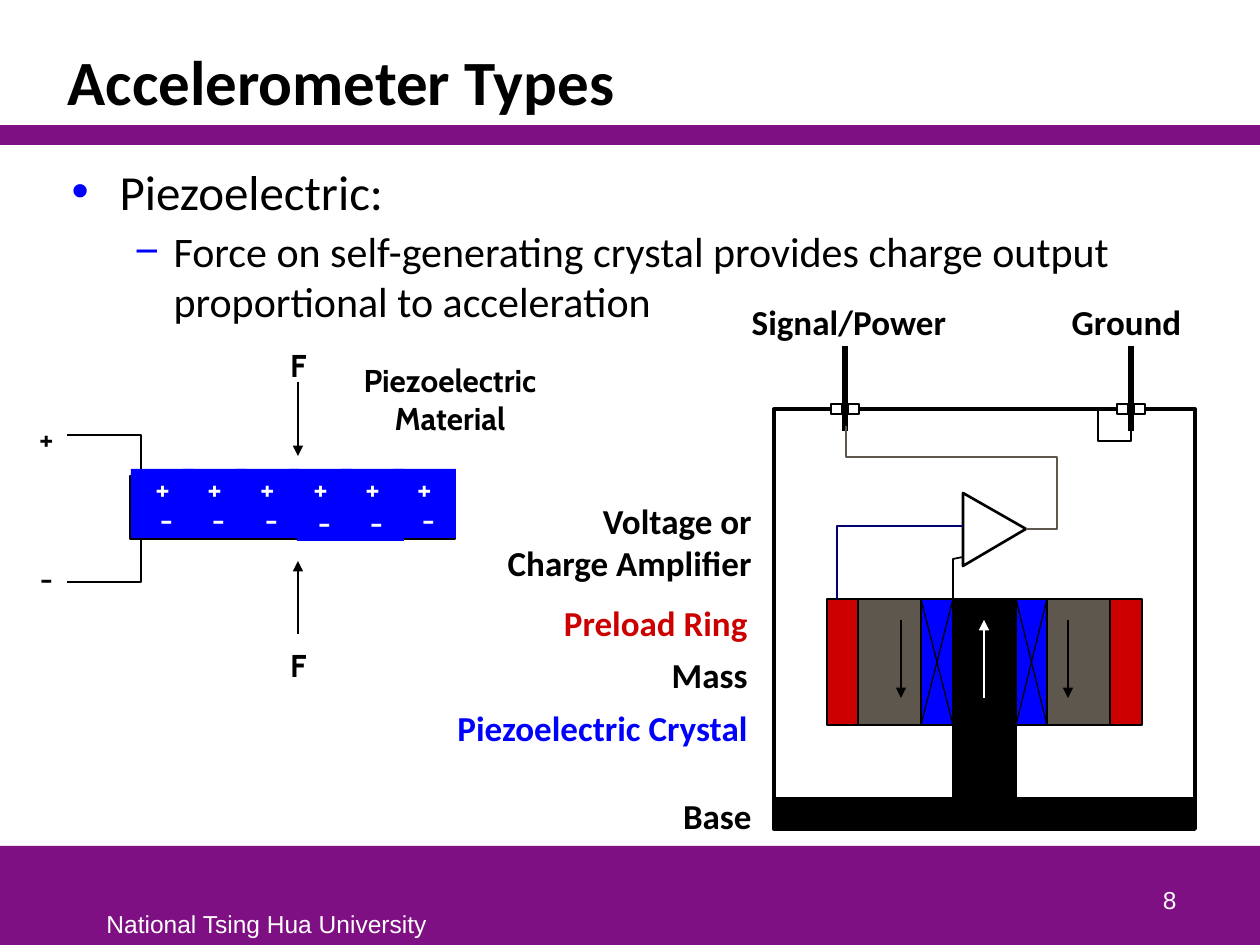
from lxml import etree
from pptx import Presentation
from pptx.dml.color import RGBColor
from pptx.enum.shapes import MSO_CONNECTOR, MSO_SHAPE
from pptx.enum.text import MSO_ANCHOR, MSO_AUTO_SIZE, PP_ALIGN
from pptx.oxml.ns import qn
from pptx.util import Pt

EMU_PER_PX = 914400 / 126

BLACK = RGBColor(0x00, 0x00, 0x00)
WHITE = RGBColor(0xFF, 0xFF, 0xFF)
PURPLE = RGBColor(0x7F, 0x10, 0x84)
BLUE = RGBColor(0x00, 0x00, 0xFF)
NAVY = RGBColor(0x00, 0x00, 0x70)
RED = RGBColor(0xCC, 0x00, 0x00)
GREY = RGBColor(0x5E, 0x57, 0x4E)

LEFT, CENTER, RIGHT = PP_ALIGN.LEFT, PP_ALIGN.CENTER, PP_ALIGN.RIGHT
TOP, MIDDLE, BOTTOM = MSO_ANCHOR.TOP, MSO_ANCHOR.MIDDLE, MSO_ANCHOR.BOTTOM
RECTANGLE = MSO_SHAPE.RECTANGLE
STRAIGHT = MSO_CONNECTOR.STRAIGHT
NO_AUTOFIT = MSO_AUTO_SIZE.NONE


def px(*lengths):
    return [round(length * EMU_PER_PX) for length in lengths]


def format_paragraph(paragraph, text, size=20, font="Calibri", color=BLACK,
                     bold=False, align=LEFT, before=0):
    paragraph.text = text
    paragraph.alignment = align
    paragraph.space_before = Pt(before)
    paragraph.font.size = Pt(size)
    paragraph.font.name = font
    paragraph.font.color.rgb = color
    paragraph.font.bold = bold


def add_text(slide, box, *texts, anchor=TOP, wrap=True, fill=None, inset=True, **text_format):
    """Add a text box; each text is a string, or a (string, format) pair."""
    shape = slide.shapes.add_textbox(*px(*box))
    if fill is not None:
        shape.fill.solid()
        shape.fill.fore_color.rgb = fill
    frame = shape.text_frame
    frame.word_wrap = wrap
    frame.vertical_anchor = anchor
    if not inset:
        frame.margin_left = frame.margin_right = frame.margin_top = frame.margin_bottom = 0
    for index, item in enumerate(texts):
        text, extra = (item, {}) if isinstance(item, str) else item
        paragraph = frame.add_paragraph() if index else frame.paragraphs[0]
        format_paragraph(paragraph, text, **{**text_format, **extra})


def style_outline(shape, color, width):
    shape.line.color.rgb = color
    shape.line.width = Pt(width)


def add_box(slide, box, fill=None, line=BLACK, width=0.75):
    shape = slide.shapes.add_shape(RECTANGLE, *px(*box))
    shape.shadow.inherit = False
    if fill is None:
        shape.fill.background()
    else:
        shape.fill.solid()
        shape.fill.fore_color.rgb = fill
    if line is None:
        shape.line.fill.background()
    else:
        style_outline(shape, line, width)


def add_line(slide, start, end, color=BLACK, width=0.75, arrow=False):
    connector = slide.shapes.add_connector(STRAIGHT, *px(*start, *end))
    style_outline(connector, color, width)
    properties = connector._element.spPr
    if arrow:
        etree.SubElement(properties.find(qn("a:ln")), qn("a:tailEnd"), type="triangle")
    etree.SubElement(properties, qn("a:effectLst"))


def add_outline(slide, *points, color=BLACK, width=1, close=False):
    corners = [px(*point) for point in points]
    builder = slide.shapes.build_freeform(*corners[0])
    builder.add_line_segments(corners[1:], close=close)
    shape = builder.convert_to_shape()
    shape.shadow.inherit = False
    shape.fill.background()
    style_outline(shape, color, width)


def place(placeholder, box, anchor):
    placeholder.left, placeholder.top, placeholder.width, placeholder.height = px(*box)
    frame = placeholder.text_frame
    frame.auto_size = NO_AUTOFIT
    frame.vertical_anchor = anchor
    return frame


def add_bullet(paragraph, character, margin, hanging):
    properties = paragraph._p.get_or_add_pPr()
    left, indent = px(margin, -hanging)
    properties.set("marL", str(left))
    properties.set("indent", str(indent))
    color = etree.SubElement(properties, qn("a:buClr"))
    etree.SubElement(color, qn("a:srgbClr"), val=str(BLUE))
    etree.SubElement(properties, qn("a:buFont"), typeface="Arial")
    etree.SubElement(properties, qn("a:buChar"), char=character)


def add_frame_and_text(slide):
    add_box(slide, (0, 846, 1260, 99), PURPLE, None)
    add_box(slide, (0, 125, 1260, 20), PURPLE, None)
    add_text(slide, (94, 903, 348, 42), "National Tsing Hua University",
             wrap=False, size=14, font="Arial", color=WHITE)
    add_text(slide, (927, 858, 262, 63), "8", anchor=BOTTOM,
             size=14, font="Arial", color=WHITE, align=RIGHT)

    title = place(slide.shapes.title, (55, 31, 1130, 94), BOTTOM).paragraphs[0]
    format_paragraph(title, "Accelerometer Types", size=36, bold=True)
    title.line_spacing = 0.85

    body = place(slide.placeholders[1], (59, 155, 1126, 684), TOP)
    topic, detail = body.paragraphs[0], body.add_paragraph()
    detail.level = 1
    add_bullet(topic, "•", 48, 48)
    add_bullet(detail, "−", 102, 39)
    format_paragraph(topic, "Piezoelectric:", size=28)
    format_paragraph(detail, "Force on self-generating crystal provides charge output "
                     "proportional to acceleration", size=24, before=3)


def add_sensor(slide):
    add_box(slide, (774, 409, 421, 420), width=2.25)
    for pin in (845, 1131):
        add_line(slide, (pin, 346), (pin, 431), width=3)
        for offset in (-14, 3):
            add_box(slide, (pin + offset, 404, 11, 10), WHITE)
    add_outline(slide, (1131, 431), (1131, 441), (1098, 441), (1098, 411))
    add_box(slide, (774, 798, 421, 31), BLACK)
    add_box(slide, (953, 599, 63, 230), BLACK)

    layers = [(827, 31, RED), (858, 63, GREY), (921, 32, BLUE),
              (1016, 31, BLUE), (1047, 63, GREY), (1110, 32, RED)]
    for left, width, color in layers:
        add_box(slide, (left, 599, width, 126), color)
        if color == BLUE:
            add_line(slide, (left, 599), (left + width, 725))
            add_line(slide, (left + width, 599), (left, 725))
    for x in (901, 1068):
        add_line(slide, (x, 620), (x, 698), width=1, arrow=True)
    add_line(slide, (984, 698), (984, 620), WHITE, 1, arrow=True)

    add_outline(slide, (963, 493), (1026, 529), (963, 566), width=1.5, close=True)
    add_outline(slide, (837, 599), (837, 526), (963, 526), color=NAVY)
    add_outline(slide, (1026, 529), (1057, 529), (1057, 457), (846, 457), (846, 426), color=GREY)
    add_outline(slide, (963, 557), (953, 559), (953, 599))

    add_text(slide, (725, 294, 248, 55), "Signal/Power", bold=True, align=CENTER)
    add_text(slide, (1037, 294, 179, 55), "Ground", bold=True, align=CENTER)
    add_text(slide, (596, 788, 168, 55), "Base", bold=True, align=RIGHT)
    add_text(slide, (483, 493, 281, 97), "Voltage or Charge Amplifier", bold=True, align=RIGHT)
    add_text(slide, (407, 595, 353, 161), ("Preload Ring", {"color": RED}),
             ("Mass", {"before": 6}), ("Piezoelectric Crystal", {"color": BLUE, "before": 6}),
             bold=True, align=RIGHT)


def add_charged_crystal(slide):
    label = {"size": 18, "font": "Cabin", "bold": True, "align": CENTER}
    charge = {**label, "color": WHITE, "fill": BLUE, "anchor": MIDDLE, "inset": False}
    add_box(slide, (130, 476, 325, 63), BLUE)
    add_line(slide, (298, 382), (298, 456), width=1, arrow=True)
    add_line(slide, (298, 634), (298, 561), width=1, arrow=True)
    add_outline(slide, (141, 476), (141, 435), (67, 435))
    add_outline(slide, (141, 539), (141, 582), (67, 582))
    for text, left, top in (("F", 267, 340), ("F", 267, 640), ("+", 15, 413), ("-", 15, 553)):
        add_text(slide, (left, top, 63, 50), text, **label)
    add_text(slide, (329, 355, 242, 88), "Piezoelectric Material", **label)

    columns = [round(52.5 * index) for index in range(6)]
    for column in columns:
        add_text(slide, (131 + column, 469, 63, 38), "+", **charge)
    for column, top in zip(columns, (500, 500, 500, 503, 503, 500)):
        add_text(slide, (139 + column, top, 55, 38), "-", **charge)


def main():
    presentation = Presentation()
    presentation.slide_width, presentation.slide_height = px(1260, 945)
    slide = presentation.slides.add_slide(presentation.slide_layouts[1])
    add_frame_and_text(slide)
    add_sensor(slide)
    add_charged_crystal(slide)
    presentation.save("out.pptx")


if __name__ == "__main__":
    main()
